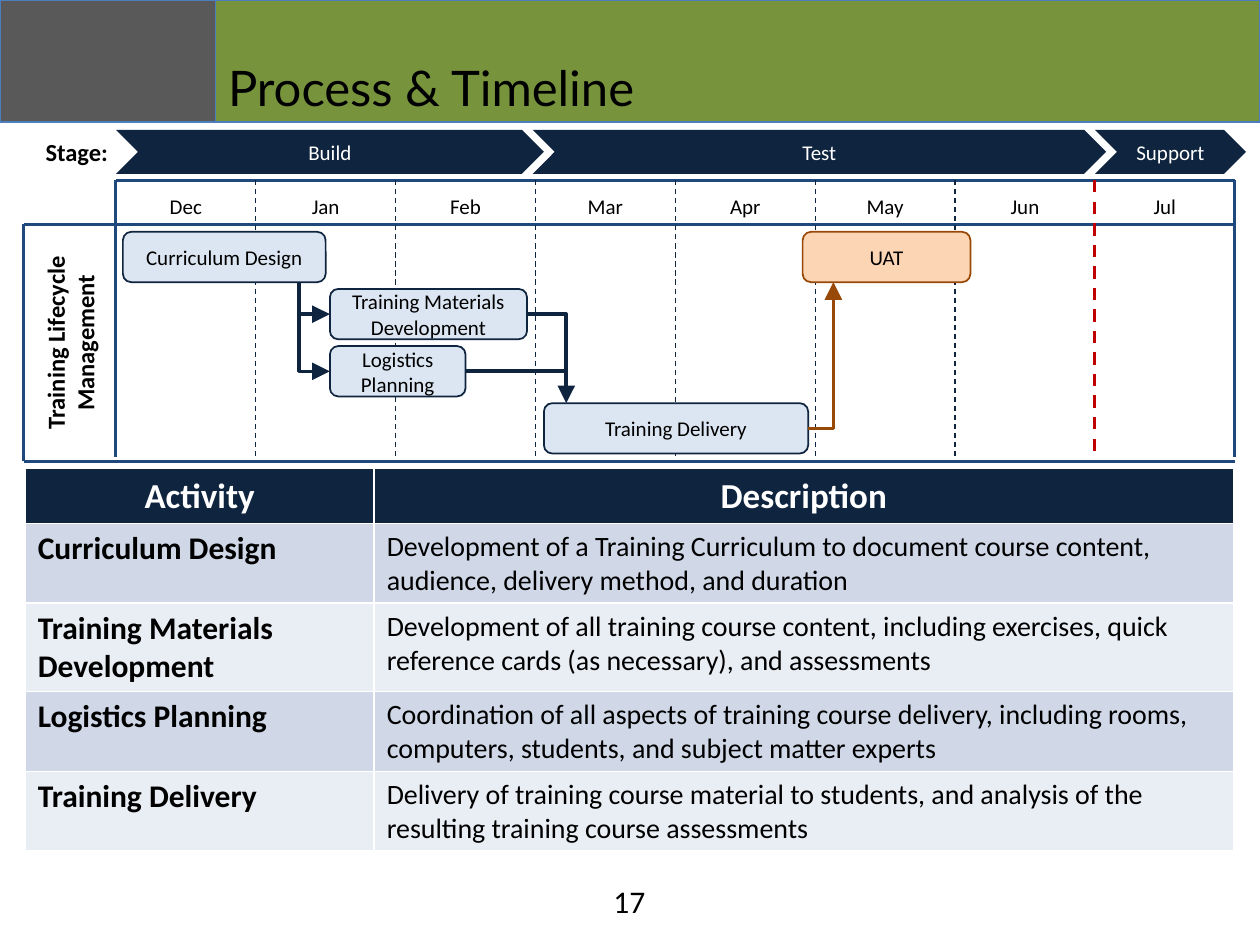
from dataclasses import dataclass

from lxml import etree
from pptx import Presentation
from pptx.dml.color import RGBColor
from pptx.enum.dml import MSO_LINE
from pptx.enum.shapes import MSO_CONNECTOR, MSO_SHAPE
from pptx.enum.text import MSO_ANCHOR, MSO_AUTO_SIZE, PP_ALIGN
from pptx.oxml.ns import qn
from pptx.util import Inches, Pt

LEFT, CENTER = PP_ALIGN.LEFT, PP_ALIGN.CENTER
TOP, MIDDLE, BOTTOM = MSO_ANCHOR.TOP, MSO_ANCHOR.MIDDLE, MSO_ANCHOR.BOTTOM
RECT, ROUNDED, CHEVRON = MSO_SHAPE.RECTANGLE, MSO_SHAPE.ROUNDED_RECTANGLE, MSO_SHAPE.CHEVRON
STRAIGHT, ELBOW = MSO_CONNECTOR.STRAIGHT, MSO_CONNECTOR.ELBOW
DASH, FIXED_SIZE = MSO_LINE.DASH, MSO_AUTO_SIZE.NONE
RIGHT_SIDE = 3


@dataclass(frozen=True)
class Theme:
    heading: str = "Lato"
    body: str = "Calibri"
    black: str = "000000"
    white: str = "FFFFFF"
    gray: str = "595959"
    green: str = "77933C"
    band_edge: str = "4B7EBC"
    navy: str = "0F243E"
    frame: str = "1F497D"
    pale_blue: str = "DCE6F2"
    peach: str = "FCD5B5"
    brown: str = "984807"
    red: str = "C00000"
    bands: tuple = ("D0D8E8", "E9EDF4")
    title_size: int = 28
    head_size: int = 20
    activity_size: int = 18
    description_size: int = 16
    label_size: int = 14
    small_size: int = 12


THEME = Theme()
SLIDE_W, SLIDE_H = 10, 7.5
BAND_H = 0.97
BAND_SPLIT = 1.71
MONTHS = ["Dec", "Jan", "Feb", "Mar", "Apr", "May", "Jun", "Jul"]
GRID_LEFT, GRID_RIGHT, MARGIN = 0.92, 9.8, 0.19
MONTH_W = (GRID_RIGHT - GRID_LEFT) / len(MONTHS)
MONTH_TOP, LANE_TOP, GRID_END, FRAME_END = 1.43, 1.78, 3.63, 3.66
FIRST_LANE, LAST_LANE, TASK_H = 1.84, 3.2, 0.4
LANE_H = (LAST_LANE - FIRST_LANE) / 3
STAGE_TOP, STAGE_H = 1.03, 0.35
STAGES = [("Build", 0, 3.06), ("Test", 2.98, 4.1), ("Support", 7, 1.08)]
ACTIVITIES = [
    ("Curriculum Design", "Development of a Training Curriculum to document course content, "
     "audience, delivery method, and duration"),
    ("Training Materials Development", "Development of all training course content, including "
     "exercises, quick reference cards (as necessary), and assessments"),
    ("Logistics Planning", "Coordination of all aspects of training course delivery, including "
     "rooms, computers, students, and subject matter experts"),
    ("Training Delivery", "Delivery of training course material to students, and analysis of "
     "the resulting training course assessments"),
]


def rgb(color):
    return RGBColor.from_string(color)


def month_x(column):
    return GRID_LEFT + MONTH_W * column


def write(frame, text, *, size=THEME.small_size, color=THEME.black, font=THEME.body,
          bold=False, align=CENTER, anchor=MIDDLE, wrap=True):
    frame.word_wrap = wrap
    frame.vertical_anchor = anchor
    if not wrap:
        frame.margin_left = frame.margin_right = 0
    paragraph = frame.paragraphs[0]
    paragraph.alignment = align
    run = paragraph.add_run()
    run.text = text
    run.font.size = Pt(size)
    run.font.name = font
    run.font.bold = bold
    run.font.color.rgb = rgb(color)


def add_label(slide, box, text, **style):
    label = slide.shapes.add_textbox(*map(Inches, box))
    write(label.text_frame, text, **style)
    return label


def add_block(slide, preset, box, fill, edge=None, width=1):
    block = slide.shapes.add_shape(preset, *map(Inches, box))
    block.shadow.inherit = False
    block.fill.solid()
    block.fill.fore_color.rgb = rgb(fill)
    if edge:
        block.line.color.rgb = rgb(edge)
        block.line.width = Pt(width)
    else:
        block.line.fill.background()
    return block


def add_task(slide, text, column, span, lane, fill=THEME.pale_blue, edge=THEME.navy):
    box = (month_x(column), FIRST_LANE + LANE_H * lane, MONTH_W * span, TASK_H)
    task = add_block(slide, ROUNDED, box, fill, edge)
    write(task.text_frame, text)
    return task


def add_line(slide, start, end, color, width, *, kind=STRAIGHT, dash=None, arrow=False):
    line = slide.shapes.add_connector(kind, *map(Inches, (*start, *end)))
    line.line.color.rgb = rgb(color)
    line.line.width = Pt(width)
    if dash:
        line.line.dash_style = dash
    properties = line.element.spPr
    if arrow:
        etree.SubElement(properties.find(qn("a:ln")), qn("a:tailEnd"),
                         type="triangle", w="lg", len="lg")
    etree.SubElement(properties, qn("a:effectLst"))
    return line


def add_elbow(slide, start, end, color, down_first=False):
    (x1, y1), (x2, y2) = start, end
    if down_first:
        center_x, center_y = (x1 + x2) / 2, (y1 + y2) / 2
        half_w, half_h = (y2 - y1) / 2, (x2 - x1) / 2
        start = (center_x + half_w, center_y - half_h)
        end = (center_x - half_w, center_y + half_h)
    elbow = add_line(slide, start, end, color, 2, kind=ELBOW, arrow=True)
    properties = elbow.element.spPr
    properties.find(qn("a:prstGeom")).set("prst", "bentConnector2")
    if down_first:
        properties.find(qn("a:xfrm")).set("rot", str(270 * 60000))


def side_points(task):
    middle = (task.top + task.height / 2) / Inches(1)
    return (task.left / Inches(1), middle), ((task.left + task.width) / Inches(1), middle)


def add_header(slide):
    for left, right, fill in [(0, BAND_SPLIT, THEME.gray), (BAND_SPLIT, SLIDE_W, THEME.green)]:
        add_block(slide, RECT, (left, 0, right - left, BAND_H), fill, THEME.band_edge, 0.75)
    title = slide.shapes.title
    title.left, title.top, title.width, title.height = map(Inches, (BAND_SPLIT, 0, 5.21, BAND_H))
    write(title.text_frame, "Process & Timeline", size=THEME.title_size, font=THEME.heading,
          align=LEFT, anchor=BOTTOM)
    title.text_frame.auto_size = FIXED_SIZE
    title.element.getparent().append(title.element)


def add_calendar(slide):
    for start, end in [
        ((MARGIN, LANE_TOP), (GRID_RIGHT, LANE_TOP)),
        ((GRID_LEFT, MONTH_TOP), (GRID_RIGHT, MONTH_TOP)),
        ((GRID_LEFT, MONTH_TOP), (GRID_LEFT, GRID_END)),
        ((MARGIN, LANE_TOP), (MARGIN, FRAME_END)),
        ((GRID_RIGHT, MONTH_TOP), (GRID_RIGHT, GRID_END)),
        ((MARGIN, FRAME_END), (GRID_RIGHT, FRAME_END)),
    ]:
        add_line(slide, start, end, THEME.frame, 1.75)
    for column, month in enumerate(MONTHS):
        add_label(slide, (month_x(column + 0.5) - 0.2, 1.49, 0.4, 0.27), month,
                  anchor=TOP, wrap=False)
        if column:
            color, width = (THEME.red, 1.75) if month == "Jul" else (THEME.navy, 0.75)
            add_line(slide, (month_x(column), MONTH_TOP), (month_x(column), GRID_END),
                     color, width, dash=DASH)
    lane = add_label(slide, (MARGIN, LANE_TOP, GRID_LEFT - MARGIN, FRAME_END - LANE_TOP),
                     "Training Lifecycle Management", size=THEME.label_size, bold=True)
    lane.element.txBody.find(qn("a:bodyPr")).set("vert", "vert270")


def add_stages(slide):
    for stage, column, span in STAGES:
        box = (month_x(column), STAGE_TOP, MONTH_W * span, STAGE_H)
        write(add_block(slide, CHEVRON, box, THEME.navy).text_frame, stage, color=THEME.white)
    add_label(slide, (0.26, 1.04, 0.7, 0.34), "Stage:", size=THEME.label_size, bold=True,
              anchor=TOP)


def add_tasks(slide):
    add_task(slide, "Curriculum Design", 0.05, 1.45, 0)
    materials = add_task(slide, "Training Materials Development", 1.53, 1.41, 1)
    logistics = add_task(slide, "Logistics Planning", 1.53, 0.97, 2)
    delivery = add_task(slide, "Training Delivery", 3.06, 1.89, 3)
    add_task(slide, "UAT", 4.91, 1.2, 0, THEME.peach, THEME.brown)
    design_end = FIRST_LANE + TASK_H
    for follower in (materials, logistics):
        add_elbow(slide, (month_x(1.31), design_end), side_points(follower)[0], THEME.navy,
                  down_first=True)
    merge_x = month_x(3.22)
    add_elbow(slide, side_points(materials)[1], (merge_x, LAST_LANE), THEME.navy)
    start = side_points(logistics)[1]
    merge = add_line(slide, start, (merge_x, start[1]), THEME.navy, 2)
    merge.begin_connect(logistics, RIGHT_SIDE)
    add_elbow(slide, side_points(delivery)[1], (month_x(5.13), design_end), THEME.brown)


def add_activities(slide):
    box = map(Inches, (0.2, 3.72, 9.59, 3.03))
    table = slide.shapes.add_table(len(ACTIVITIES) + 1, 2, *box).table
    for column, width in zip(table.columns, (2.77, 6.82)):
        column.width = Inches(width)
    for row, height in zip(table.rows, (0.41, 0.63, 0.7, 0.63, 0.63)):
        row.height = Inches(height)
    for r, texts in enumerate([("Activity", "Description"), *ACTIVITIES]):
        for c, text in enumerate(texts):
            cell = table.cell(r, c)
            cell.fill.solid()
            cell.fill.fore_color.rgb = rgb(THEME.bands[(r - 1) % 2] if r else THEME.navy)
            style = dict(size=THEME.head_size, color=THEME.white, bold=True)
            if r:
                size = THEME.description_size if c else THEME.activity_size
                style = dict(size=size, bold=c == 0, align=LEFT)
            write(cell.text_frame, text, anchor=TOP, **style)


def main():
    deck = Presentation()
    deck.slide_width, deck.slide_height = Inches(SLIDE_W), Inches(SLIDE_H)
    slide = deck.slides.add_slide(deck.slide_layouts[5])
    for add_part in (add_header, add_calendar, add_stages, add_tasks, add_activities):
        add_part(slide)
    add_label(slide, (3.83, 6.95, 2.33, 0.4), "17", size=THEME.activity_size, anchor=TOP)
    deck.save("out.pptx")


if __name__ == "__main__":
    main()
